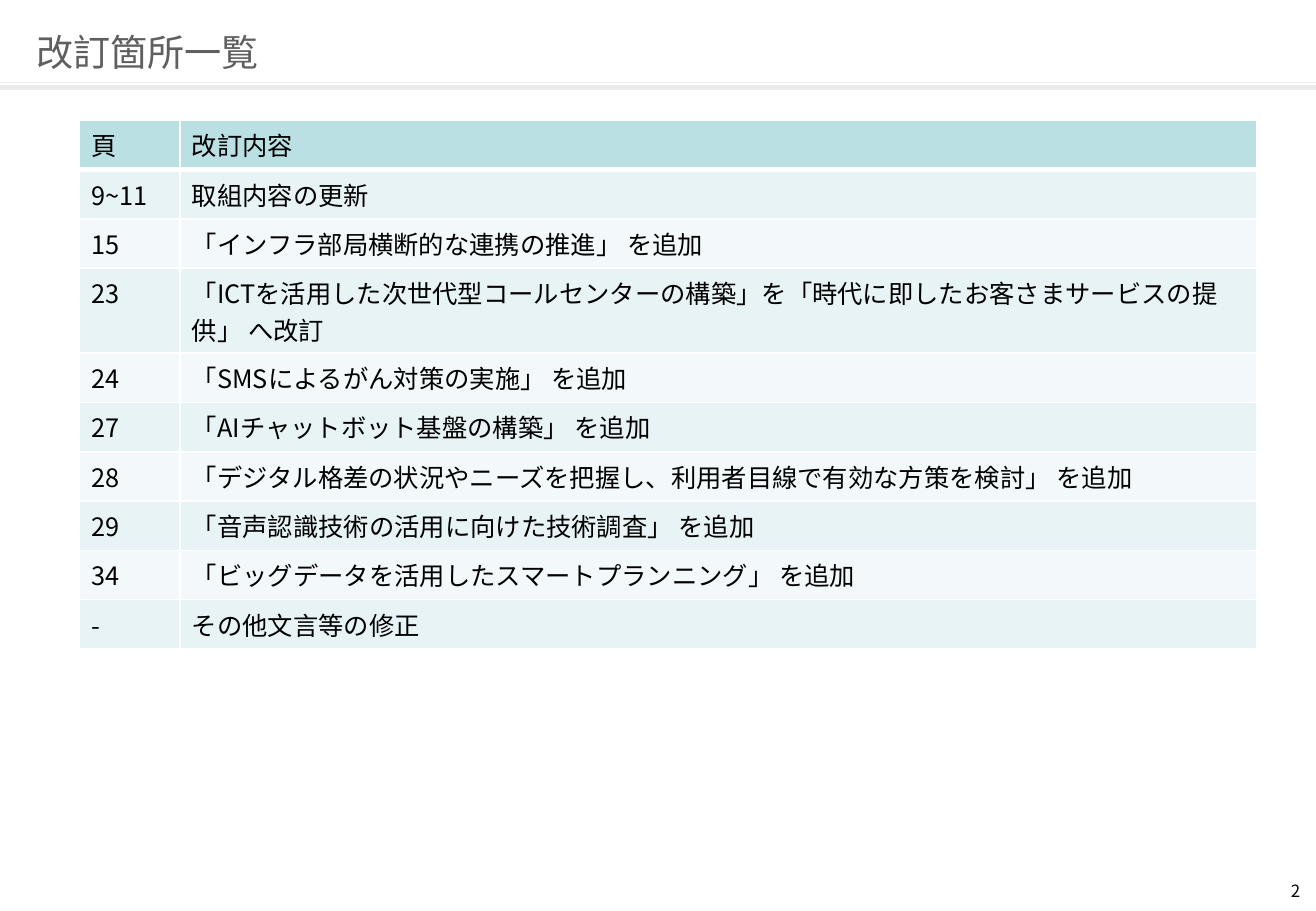
"""Build the slide that lists the revised pages."""
from dataclasses import dataclass

from lxml import etree
from pptx import Presentation
from pptx.dml.color import RGBColor
from pptx.enum.shapes import MSO_CONNECTOR, MSO_SHAPE
from pptx.enum.text import MSO_ANCHOR, PP_ALIGN
from pptx.oxml.ns import qn
from pptx.util import Inches, Pt

STRAIGHT = MSO_CONNECTOR.STRAIGHT
RECTANGLE = MSO_SHAPE.RECTANGLE
TOP, MIDDLE = MSO_ANCHOR.TOP, MSO_ANCHOR.MIDDLE
LEFT, RIGHT = PP_ALIGN.LEFT, PP_ALIGN.RIGHT

WIDTH, HEIGHT = 10.83, 7.5
WRAPPED_ROW, WRAPPED_HEIGHT = 3, 0.7
REVISIONS = [
    ("頁", "改訂内容"),
    ("9~11", "取組内容の更新"),
    ("15", "「インフラ部局横断的な連携の推進」 を追加"),
    ("23", "「ICTを活用した次世代型コールセンターの構築」を「時代に即したお客さまサービスの提供」 へ改訂"),
    ("24", "「SMSによるがん対策の実施」 を追加"),
    ("27", "「AIチャットボット基盤の構築」 を追加"),
    ("28", "「デジタル格差の状況やニーズを把握し、利用者目線で有効な方策を検討」 を追加"),
    ("29", "「音声認識技術の活用に向けた技術調査」 を追加"),
    ("34", "「ビッグデータを活用したスマートプランニング」 を追加"),
    ("-", "その他文言等の修正"),
]


@dataclass(frozen=True)
class Theme:
    """Colours, typeface and type sizes."""

    font: str = "Noto Sans CJK JP"
    title_color: str = "5F5F5F"
    text_color: str = "000000"
    rule_color: str = "EAEAEA"
    border_color: str = "FFFFFF"
    header_fill: str = "BBE0E3"
    band_fills: tuple = ("F3F9FA", "E7F3F4")
    title_size: int = 22
    table_size: int = 15
    number_size: int = 10


class SlideBuilder:
    """Draw styled elements on the current slide."""

    def __init__(self, page, theme):
        """Keep the slide and its style."""
        self.page = page
        self.theme = theme

    def span(self, para, text, size, color):
        """Add one styled run to a paragraph."""
        span = para.add_run()
        span.text = text
        font = span.font
        font.name, font.size, font.bold = self.theme.font, Pt(size), False
        font.color.rgb = RGBColor.from_string(color)
        east_asian = etree.SubElement(span._r.get_or_add_rPr(), qn("a:ea"))
        east_asian.set("typeface", self.theme.font)

    def text(self, area, text, size, color, align=LEFT, anchor=TOP):
        """Add a text box without margins."""
        box = self.page.shapes.add_textbox(*map(Inches, area))
        frame = box.text_frame
        frame.word_wrap = True
        frame.vertical_anchor = anchor
        frame.margin_left = frame.margin_right = 0
        frame.margin_top = frame.margin_bottom = 0
        para = frame.paragraphs[0]
        para.alignment = align
        self.span(para, text, size, color)

    def rule(self, top):
        """Add a thin line across the page."""
        line = self.page.shapes.add_connector(
            STRAIGHT, 0, Inches(top), Inches(WIDTH), Inches(top))
        line.line.color.rgb = RGBColor.from_string(self.theme.rule_color)
        line.line.width = Pt(0.75)
        etree.SubElement(line._element.spPr, qn("a:effectLst"))

    def band(self, top, height):
        """Add a filled strip across the page."""
        strip = self.page.shapes.add_shape(
            RECTANGLE, 0, Inches(top), Inches(WIDTH), Inches(height))
        strip.shadow.inherit = False
        strip.fill.solid()
        strip.fill.fore_color.rgb = RGBColor.from_string(self.theme.rule_color)
        strip.line.fill.background()

    def border(self, cell, bottom_width):
        """Draw the four borders of a table cell."""
        properties = cell._tc.get_or_add_tcPr()
        for side, width in zip("LRTB", (1, 1, 1, bottom_width)):
            line = etree.SubElement(properties, qn(f"a:ln{side}"), w=str(Pt(width)))
            fill = etree.SubElement(line, qn("a:solidFill"))
            etree.SubElement(fill, qn("a:srgbClr"), val=self.theme.border_color)

    def table(self, area, widths, rows):
        """Add a table with a header and alternating row fills."""
        theme = self.theme
        grid = self.page.shapes.add_table(
            len(rows), len(widths), *map(Inches, area)).table
        for column, width in zip(grid.columns, widths):
            column.width = Inches(width)
        for index, row in enumerate(rows):
            fill = theme.band_fills[index % 2] if index else theme.header_fill
            for cell, text in zip(grid.rows[index].cells, row):
                self.border(cell, 1 if index else 3)
                cell.fill.solid()
                cell.fill.fore_color.rgb = RGBColor.from_string(fill)
                self.span(cell.text_frame.paragraphs[0], text,
                          theme.table_size, theme.text_color)
        return grid


def main():
    """Create and save the deck."""
    deck = Presentation()
    deck.slide_width, deck.slide_height = Inches(WIDTH), Inches(HEIGHT)
    theme = Theme()
    builder = SlideBuilder(deck.slides.add_slide(deck.slide_layouts[6]), theme)
    builder.rule(0.68)
    builder.band(0.7, 0.04)
    builder.text((8.17, 7.25, 2.53, 0.2), "2", theme.number_size,
                 theme.text_color, align=RIGHT)
    builder.text((0.3, 0.21, 9.92, 0.43), "改訂箇所一覧", theme.title_size,
                 theme.title_color, anchor=MIDDLE)
    revisions = builder.table((0.65, 0.99, 9.69, 4.06), (0.83, 8.86), REVISIONS)
    revisions.rows[WRAPPED_ROW].height = Inches(WRAPPED_HEIGHT)
    deck.save("out.pptx")


if __name__ == "__main__":
    main()
